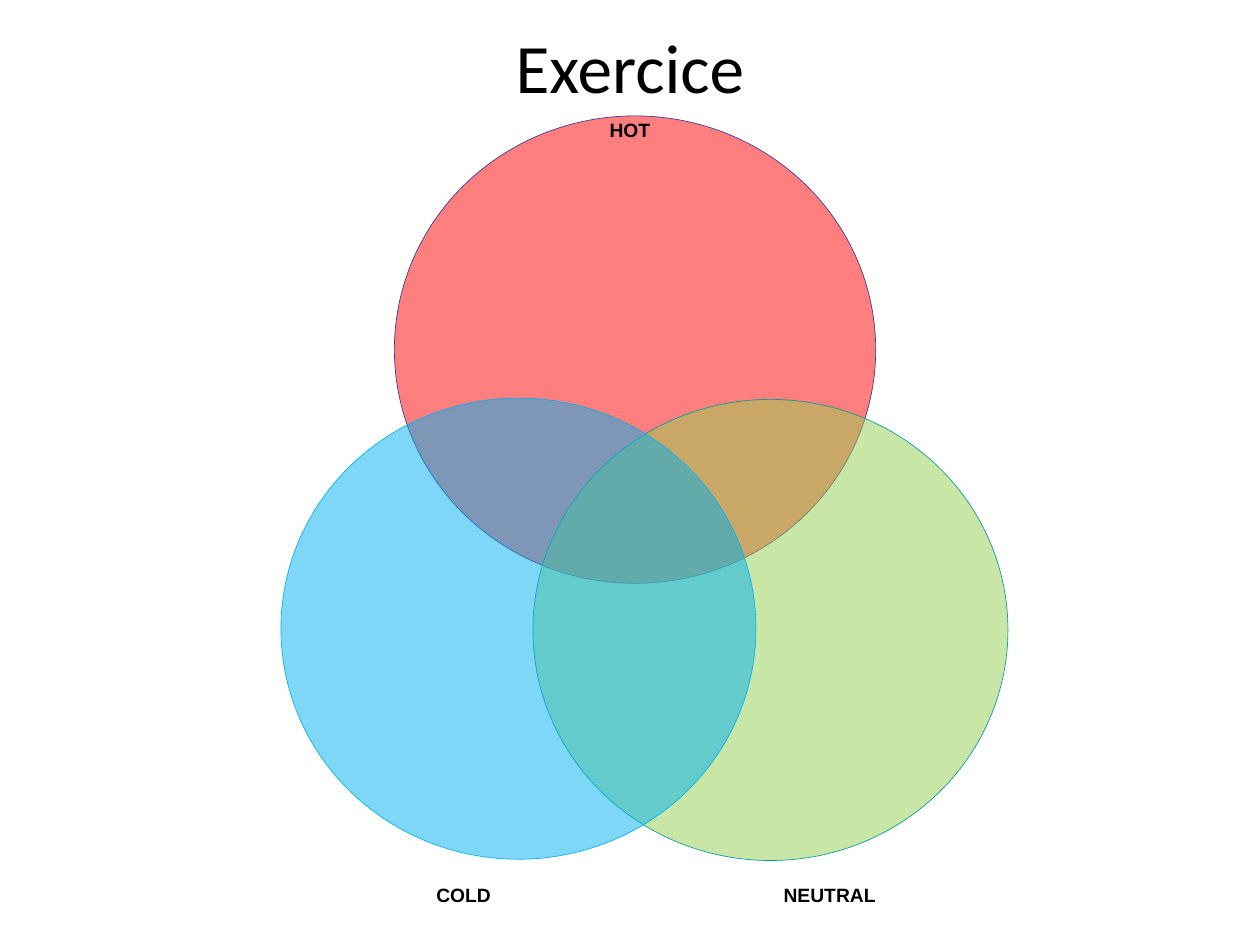
from dataclasses import dataclass

from lxml import etree
from pptx import Presentation
from pptx.dml.color import RGBColor
from pptx.enum.shapes import MSO_SHAPE
from pptx.enum.text import MSO_ANCHOR, PP_ALIGN
from pptx.oxml.ns import qn
from pptx.slide import Slide
from pptx.util import Inches, Pt

BLACK = RGBColor(0x00, 0x00, 0x00)
RED = RGBColor(0xFF, 0x00, 0x00)
GREEN = RGBColor(0x92, 0xD0, 0x50)
BLUE = RGBColor(0x00, 0xB0, 0xF0)
NAVY = RGBColor(0x33, 0x33, 0x99)
TEAL = RGBColor(0x00, 0x99, 0x99)
OPACITY_PERCENT = 50


@dataclass
class Circle:
    left: float
    top: float
    width: float
    height: float
    fill: RGBColor
    line: RGBColor


@dataclass
class Label:
    text: str
    left: float
    top: float
    width: float
    height: float = 0.56
    font: str = "Arial"
    size: float = 11
    bold: bool = True


CIRCLES = [
    Circle(3.13, 0.92, 3.82, 3.71, RED, NAVY),
    Circle(4.23, 3.17, 3.77, 3.66, GREEN, TEAL),
    Circle(2.23, 3.16, 3.77, 3.66, BLUE, BLUE),
]
LABELS = [
    Label("NEUTRAL", 6.12, 6.82, 0.93),
    Label("COLD", 3.38, 6.82, 0.6),
    Label("HOT", 4.7, 0.75, 0.6),
    Label("Exercice", 0.5, 0.3, 9, 0.44, "Calibri", 39.6, False),
]


def draw_circle(slide: Slide, circle: Circle) -> None:
    shape = slide.shapes.add_shape(
        MSO_SHAPE.OVAL, Inches(circle.left), Inches(circle.top),
        Inches(circle.width), Inches(circle.height))
    shape.shadow.inherit = False
    shape.fill.solid()
    shape.fill.fore_color.rgb = circle.fill
    # Half-transparent fill lets the overlaps show
    color = shape.fill._xPr.find(qn("a:solidFill")).find(qn("a:srgbClr"))
    etree.SubElement(color, qn("a:alpha")).set("val", str(OPACITY_PERCENT * 1000))
    shape.line.color.rgb = circle.line
    shape.line.width = Pt(0.37)


def draw_label(slide: Slide, label: Label) -> None:
    box = slide.shapes.add_textbox(
        Inches(label.left), Inches(label.top),
        Inches(label.width), Inches(label.height))
    frame = box.text_frame
    frame.word_wrap = True
    frame.vertical_anchor = MSO_ANCHOR.MIDDLE
    frame.margin_left = frame.margin_right = Inches(0)
    frame.margin_top = frame.margin_bottom = Inches(0)
    paragraph = frame.paragraphs[0]
    paragraph.alignment = PP_ALIGN.CENTER
    run = paragraph.add_run()
    run.text = label.text
    run.font.name = label.font
    run.font.size = Pt(label.size)
    run.font.bold = label.bold
    run.font.color.rgb = BLACK


def main() -> None:
    presentation = Presentation()
    presentation.slide_width = Inches(10)
    presentation.slide_height = Inches(7.5)
    slide = presentation.slides.add_slide(presentation.slide_layouts[6])

    # Venn diagram
    for circle in CIRCLES:
        draw_circle(slide, circle)

    # Set names and title
    for label in LABELS:
        draw_label(slide, label)

    presentation.save("out.pptx")


if __name__ == "__main__":
    main()
